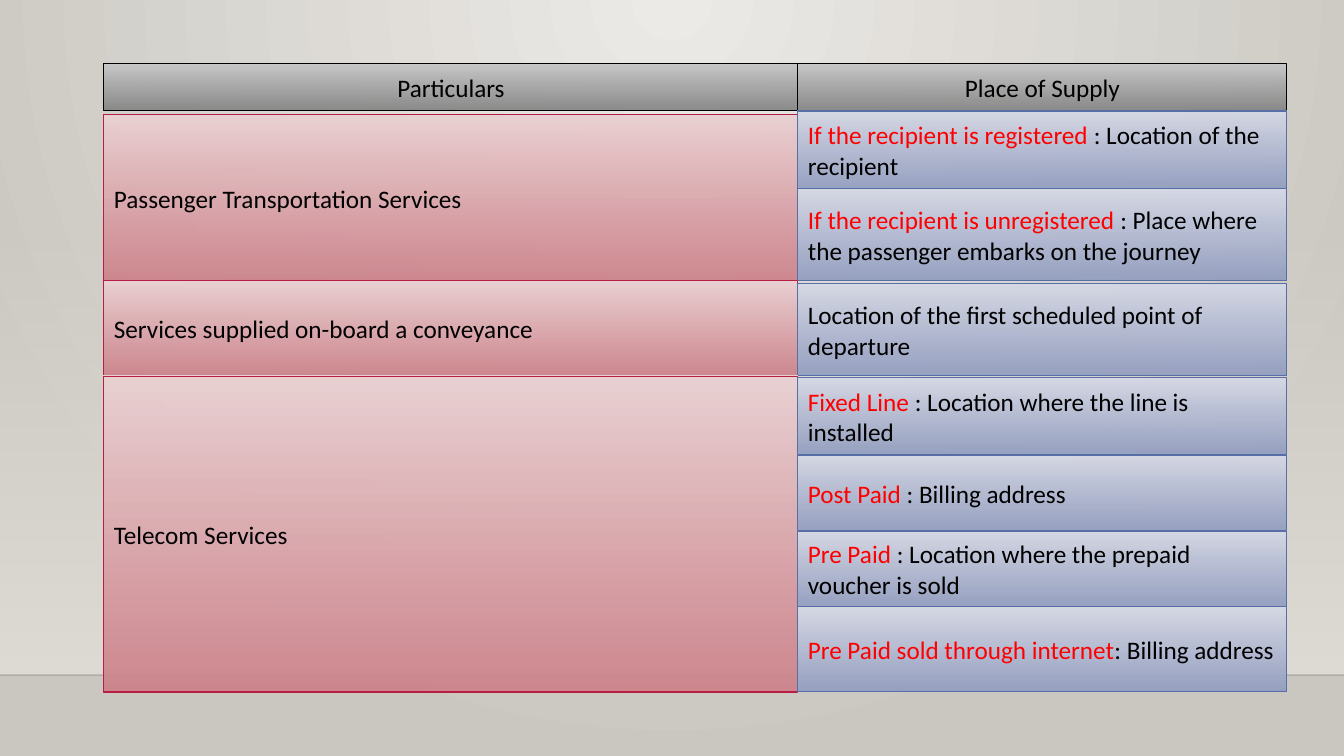
from dataclasses import dataclass

from lxml import etree
from pptx import Presentation
from pptx import util as u
from pptx.dml.color import RGBColor
from pptx.enum import shapes, text
from pptx.oxml.ns import qn

HEADINGS = ("Particulars", "Place of Supply")
HEADER_TOP, HEADER_HEIGHT = 64, 47

# (service, top, height, [(condition, place, top, height), ...])
SERVICES = [
    ("Passenger Transportation Services", 115, 167, [
        ("If the recipient is registered ", ": Location of the recipient", 111, 78),
        ("If the recipient is unregistered ",
         ": Place where the passenger embarks on the journey", 189, 92),
    ]),
    ("Services supplied on-board a conveyance", 281, 95, [
        ("", "Location of the first scheduled point of departure", 284, 92),
    ]),
    ("Telecom Services", 376, 316, [
        ("Fixed Line ", ": Location where the line is installed", 378, 77),
        ("Post Paid ", ": Billing address", 455, 76),
        ("Pre Paid ", ": Location where the prepaid voucher is sold", 531, 76),
        ("Pre Paid sold through internet", ": Billing address", 607, 85),
    ]),
]
COLUMNS = ((104, 694), (798, 489))  # left, width
SLIDE_WIDTH, SLIDE_HEIGHT = 1344, 756
WALL_TOP, FLOOR_TOP = 223, 675


@dataclass(frozen=True)
class Theme:
    font: str = "Calibri"
    size: int = 18
    ink: str = "000000"
    condition: str = "FF0000"
    border: float = 0.75
    # gradient start, gradient end, outline
    header: tuple = ("C8C8C8", "848484", "000000")
    service: tuple = ("EAD1D3", "CD828A", "B71E42")
    place: tuple = ("D6D9E5", "929DC0", "586EA6")
    cell_alpha: int = 92
    backdrop: tuple = ("ECEAE7", "CAC7C1")
    wall: str = "DFDBD5"
    floor_line: str = "000001"
    floor_alpha: int = 20


THEME = Theme()


def px(length):
    return u.Emu(round(length * 914400 / 100.8))


def rgb(value):
    return RGBColor.from_string(value)


def set_alpha(color_parent, percent):
    color = color_parent.find(qn("a:srgbClr"))
    etree.SubElement(color, qn("a:alpha")).set("val", str(percent * 1000))


def fill_gradient(fill, colors):
    fill.gradient()
    for stop, color, position in zip(fill.gradient_stops, colors, (0, 1)):
        stop.color.rgb = rgb(color)
        stop.position = position


def add_gradient_box(slide, left, top, width, height, colors, alphas):
    box = slide.shapes.add_shape(shapes.MSO_SHAPE.RECTANGLE,
                                 px(left), px(top), px(width), px(height))
    box.shadow.inherit = False
    fill_gradient(box.fill, colors)
    box.fill.gradient_angle = 270  # counter-clockwise: top to bottom
    for stop, alpha in zip(box.element.iter(qn("a:gs")), alphas):
        if alpha < 100:
            set_alpha(stop, alpha)
    return box


def add_cell(slide, column, top, height, palette, align, runs):
    left, width = COLUMNS[column]
    box = add_gradient_box(slide, left, top, width, height, palette[:2],
                           (100, THEME.cell_alpha))
    box.line.color.rgb = rgb(palette[2])
    box.line.width = u.Pt(THEME.border)
    box.text_frame.word_wrap = True
    box.text_frame.vertical_anchor = text.MSO_ANCHOR.MIDDLE
    para = box.text_frame.paragraphs[0]
    para.alignment = align
    para.font.name, para.font.size = THEME.font, u.Pt(THEME.size)
    for words, color in runs:
        if words:
            span = para.add_run()
            span.text = words
            span.font.color.rgb = rgb(color)


def add_backdrop(slide):
    """Radial background, fading wall and floor line."""
    fill_gradient(slide.background.fill, THEME.backdrop)
    gradient = next(slide.element.iter(qn("a:gradFill")))
    gradient.remove(gradient.find(qn("a:lin")))
    radial = etree.SubElement(gradient, qn("a:path"), {"path": "circle"})
    etree.SubElement(radial, qn("a:fillToRect"),
                     {"l": "43000", "t": "0", "r": "43000", "b": "100000"})

    wall = add_gradient_box(slide, 0, WALL_TOP, SLIDE_WIDTH, FLOOR_TOP - WALL_TOP,
                            (THEME.wall, THEME.wall), (0, 100))
    wall.line.fill.background()

    floor = slide.shapes.add_connector(shapes.MSO_CONNECTOR.STRAIGHT, 0, px(FLOOR_TOP),
                                       px(SLIDE_WIDTH), px(FLOOR_TOP))
    floor.line.color.rgb = rgb(THEME.floor_line)
    floor.line.width = u.Pt(1)
    properties = floor.element.spPr
    set_alpha(next(properties.iter(qn("a:solidFill"))), THEME.floor_alpha)
    etree.SubElement(properties, qn("a:effectLst"))


def main():
    deck = Presentation()
    deck.slide_width, deck.slide_height = px(SLIDE_WIDTH), px(SLIDE_HEIGHT)
    slide = deck.slides.add_slide(deck.slide_layouts[6])
    add_backdrop(slide)

    align = text.PP_ALIGN
    for column, heading in enumerate(HEADINGS):
        add_cell(slide, column, HEADER_TOP, HEADER_HEIGHT, THEME.header,
                 align.CENTER, [(heading, THEME.ink)])
    for service, top, height, places in SERVICES:
        add_cell(slide, 0, top, height, THEME.service, align.JUSTIFY,
                 [(service, THEME.ink)])
        for condition, place, place_top, place_height in places:
            add_cell(slide, 1, place_top, place_height, THEME.place, align.LEFT,
                     [(condition, THEME.condition), (place, THEME.ink)])
    deck.save("out.pptx")


if __name__ == "__main__":
    main()
